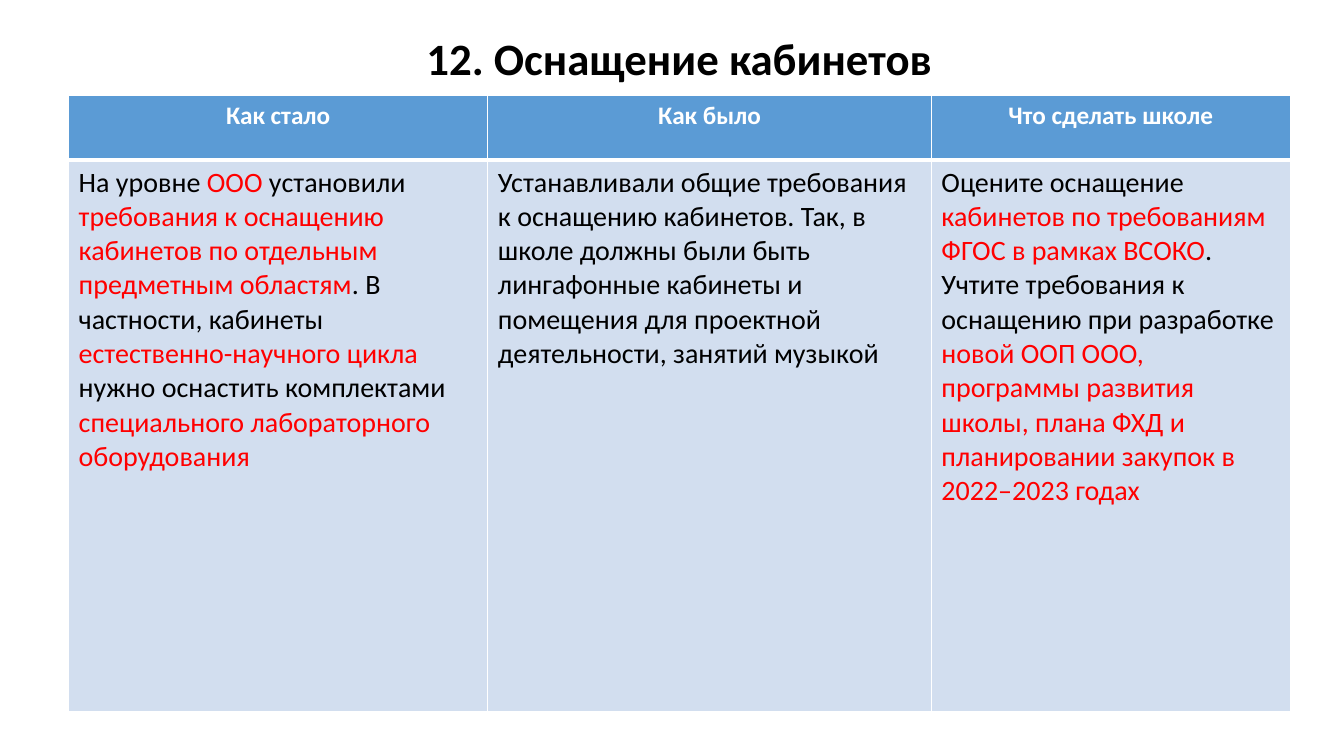
from lxml import etree
from pptx import Presentation
from pptx.dml.color import RGBColor
from pptx.enum.text import MSO_ANCHOR, PP_ALIGN
from pptx.oxml.ns import qn
from pptx.util import Pt

CENTER, LEFT = PP_ALIGN.CENTER, PP_ALIGN.LEFT
MIDDLE = MSO_ANCHOR.MIDDLE
BLACK = RGBColor(0x00, 0x00, 0x00)
WHITE = RGBColor(0xFF, 0xFF, 0xFF)
RED = RGBColor(0xFF, 0x00, 0x00)
HEADER_BLUE = RGBColor(0x5B, 0x9B, 0xD5)
BODY_BLUE = RGBColor(0xD2, 0xDE, 0xEF)
FONT = "Calibri"

COLUMN_WIDTHS = (299.5, 316.8, 256.3)
ROW_HEIGHTS = (46.1, 393.8)
HEADERS = ("Как стало", "Как было", "Что сделать школе")
BODIES = (
    [[("На уровне ", BLACK), ("ООО", RED), (" установили ", BLACK),
      ("требования к оснащению кабинетов по отдельным предметным областям", RED),
      (". В частности, кабинеты ", BLACK),
      ("естественно-научного цикла ", RED),
      ("нужно оснастить комплектами ", BLACK),
      ("специального лабораторного оборудования", RED)]],
    [[("Устанавливали общие требования к оснащению кабинетов. Так, в школе "
       "должны были быть лингафонные кабинеты и помещения для проектной "
       "деятельности, занятий музыкой", BLACK)]],
    [[("Оцените оснащение ", BLACK),
      ("кабинетов по требованиям ФГОС в рамках ВСОКО", RED), (".", BLACK)],
     [("Учтите требования к оснащению при разработке ", BLACK),
      ("новой ООП ООО, программы развития школы, плана ФХД и планировании "
       "закупок в 2022–2023 годах", RED)]],
)


def write_paragraphs(text_frame, paragraphs, size, bold, alignment):
    """Fill a text frame with paragraphs of (text, colour) runs."""
    for index, runs in enumerate(paragraphs):
        paragraph = text_frame.add_paragraph() if index else text_frame.paragraphs[0]
        paragraph.alignment = alignment
        for text, color in runs:
            run = paragraph.add_run()
            run.text = text
            run.font.name = FONT
            run.font.size = Pt(size)
            run.font.bold = bold
            run.font.color.rgb = color


def set_borders(cell, top, bottom):
    """Draw white borders around a cell, with thin sides."""
    properties = cell._tc.get_or_add_tcPr()
    for side, width in (("L", 1), ("R", 1), ("T", top), ("B", bottom)):
        line = etree.SubElement(properties, qn(f"a:ln{side}"), w=str(Pt(width)))
        fill = etree.SubElement(line, qn("a:solidFill"))
        etree.SubElement(fill, qn("a:srgbClr"), val=str(WHITE))


def fill_cell(cell, color):
    """Give a cell a solid background."""
    cell.fill.solid()
    cell.fill.fore_color.rgb = color


def add_title(slide, text):
    """Add the centred slide title."""
    shape = slide.shapes.add_textbox(Pt(71.3), Pt(5.8), Pt(828), Pt(74.9))
    text_frame = shape.text_frame
    text_frame.word_wrap = True
    text_frame.vertical_anchor = MIDDLE
    write_paragraphs(text_frame, [[(text, BLACK)]], 32, True, CENTER)
    text_frame.paragraphs[0].line_spacing = 0.9


def add_comparison_table(slide):
    """Add the table of requirements and actions."""
    table = slide.shapes.add_table(
        len(ROW_HEIGHTS), len(COLUMN_WIDTHS), Pt(49), Pt(68.4),
        Pt(sum(COLUMN_WIDTHS)), Pt(sum(ROW_HEIGHTS))).table
    for row, height in zip(table.rows, ROW_HEIGHTS):
        row.height = Pt(height)
    for index, width in enumerate(COLUMN_WIDTHS):
        table.columns[index].width = Pt(width)
        header, body = table.cell(0, index), table.cell(1, index)
        set_borders(header, 1, 3)
        fill_cell(header, HEADER_BLUE)
        write_paragraphs(header.text_frame, [[(HEADERS[index], WHITE)]], 18, True, CENTER)
        set_borders(body, 3, 1)
        fill_cell(body, BODY_BLUE)
        write_paragraphs(body.text_frame, BODIES[index], 20, False, LEFT)


def main():
    """Build and save the slide."""
    presentation = Presentation()
    presentation.slide_width, presentation.slide_height = Pt(960), Pt(540)
    slide = presentation.slides.add_slide(presentation.slide_layouts[6])
    add_title(slide, "12. Оснащение кабинетов")
    add_comparison_table(slide)
    presentation.save("out.pptx")


if __name__ == "__main__":
    main()
